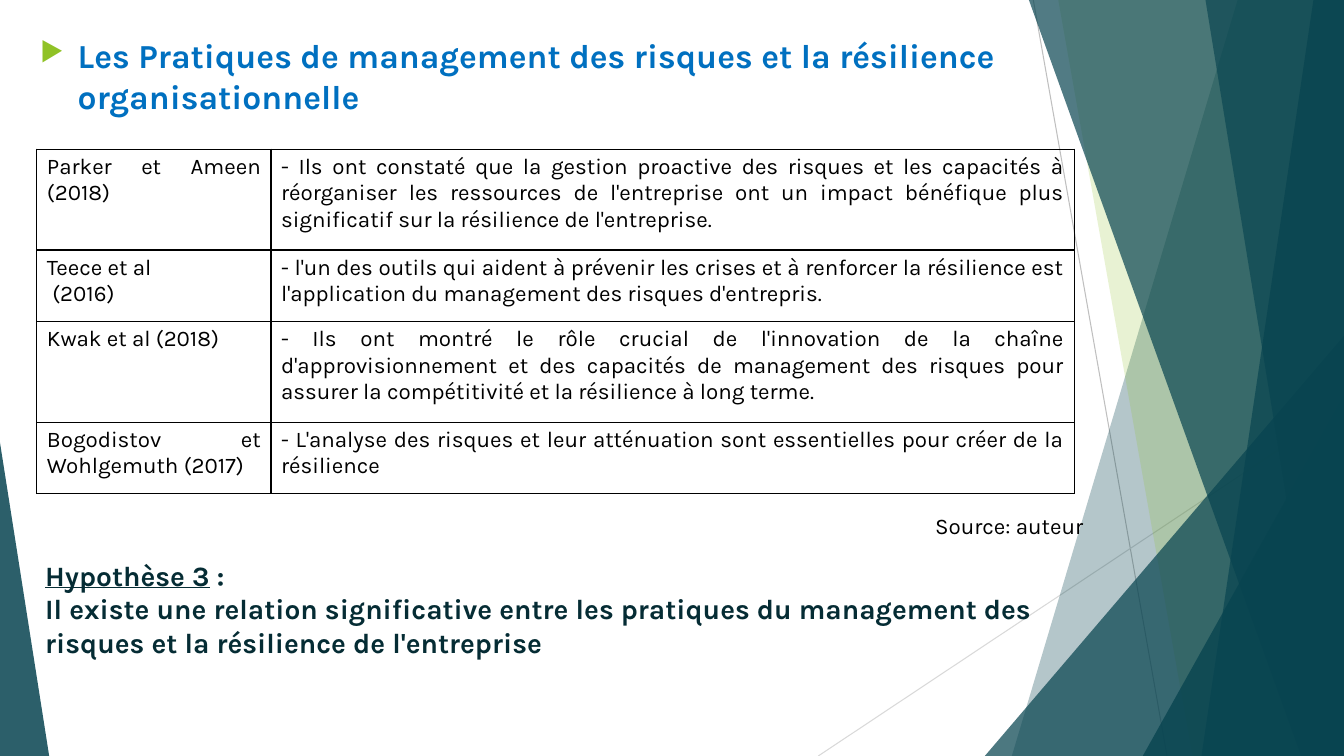
from dataclasses import dataclass

from lxml.etree import SubElement
from pptx import Presentation
from pptx.dml.color import RGBColor as RGB
from pptx.enum.shapes import MSO_CONNECTOR as CONNECTOR, MSO_SHAPE as SHAPE
from pptx.enum.text import PP_ALIGN as ALIGN
from pptx.oxml.ns import qn
from pptx.util import Cm, Pt

WIDTH, HEIGHT = 33.87, 19.05


@dataclass(frozen=True)
class Theme:
    """Colours, font and type sizes of the slide."""
    font: str = "Karla"
    teal: str = "084450"
    green: str = "90C226"
    blue: str = "0070C0"
    dark: str = "052C34"
    black: str = "000000"
    grey: str = "BFBFBF"
    light_grey: str = "D9D9D9"
    heading: int = 24
    hypothesis: int = 20
    body: int = 16


class Painter:
    """Draws styled elements on the current slide."""

    def __init__(self, slide, theme):
        """Keep the slide and its theme."""
        self.slide, self.theme = slide, theme

    def line(self, x1, y1, x2, y2, color):
        """Draw a thin straight line."""
        s = self.slide.shapes.add_connector(CONNECTOR.STRAIGHT, Cm(x1), Cm(y1), Cm(x2), Cm(y2))
        s.line.color.rgb = RGB.from_string(color)
        s.line.width = Pt(0.75)
        SubElement(s._element.spPr, qn("a:effectLst"))

    def tint(self, s, color, opacity):
        """Fill a shape with a translucent colour and no outline."""
        s.shadow.inherit = False
        s.fill.solid()
        s.fill.fore_color.rgb = RGB.from_string(color)
        s.line.fill.background()
        clr = s._element.spPr.find(qn("a:solidFill"))[0]
        SubElement(clr, qn("a:alpha"), val=str(opacity * 1000))

    def band(self, top, bottom, color, opacity):
        """Draw a full-height band from a slanted left edge to the right edge."""
        fb = self.slide.shapes.build_freeform(Cm(top), 0)
        fb.add_line_segments([(Cm(WIDTH), 0), (Cm(WIDTH), Cm(HEIGHT)), (Cm(bottom), Cm(HEIGHT))])
        self.tint(fb.convert_to_shape(), color, opacity)

    def corner(self, x, y, w, apex, opacity):
        """Draw a triangle standing on the bottom edge."""
        s = self.slide.shapes.add_shape(SHAPE.ISOSCELES_TRIANGLE, Cm(x), Cm(y), Cm(w), Cm(HEIGHT - y))
        s.adjustments[0] = apex
        self.tint(s, self.theme.teal, opacity)

    def style(self, tf, size, color, bold=False, align=None):
        """Format every paragraph and run of a text frame."""
        for p in tf.paragraphs:
            p.alignment = align
            for r in p.runs:
                r.font.name, r.font.size, r.font.bold = self.theme.font, Pt(size), bold
                r.font.color.rgb = RGB.from_string(color)

    def text(self, x, y, w, h, text, size, color, bold=False, align=None):
        """Add a wrapped text box and return its text frame."""
        tf = self.slide.shapes.add_textbox(Cm(x), Cm(y), Cm(w), Cm(h)).text_frame
        tf.word_wrap = True
        tf.text = text
        self.style(tf, size, color, bold, align)
        return tf

    def bullet(self, p, char, color, indent):
        """Give a paragraph a coloured bullet with a hanging indent."""
        pPr = p._p.get_or_add_pPr()
        pPr.set("marL", str(Cm(indent)))
        pPr.set("indent", str(-Cm(indent)))
        SubElement(SubElement(pPr, qn("a:buClr")), qn("a:srgbClr"), val=color)
        SubElement(pPr, qn("a:buSzPct"), val="80000")
        SubElement(pPr, qn("a:buChar"), char=char)

    def borders(self, cell):
        """Put a thin black border on all sides of a cell."""
        tcPr = cell._tc.get_or_add_tcPr()
        for side in "LRTB":
            ln = SubElement(tcPr, qn(f"a:ln{side}"), w=str(Pt(1)))
            SubElement(SubElement(ln, qn("a:solidFill")), qn("a:srgbClr"), val=self.theme.black)

    def table(self, x, y, widths, heights, rows):
        """Add a plain bordered table of justified text."""
        frame = self.slide.shapes.add_table(
            len(rows), len(widths), Cm(x), Cm(y), Cm(sum(widths)), Cm(sum(heights)))
        tbl = frame.table
        tbl.first_row = tbl.horz_banding = False
        for col, w in zip(tbl.columns, widths):
            col.width = Cm(w)
        for row, h, texts in zip(tbl.rows, heights, rows):
            row.height = Cm(h)
            for cell, text in zip(row.cells, texts):
                cell.text = text
                self.style(cell.text_frame, self.theme.body, self.theme.black, align=ALIGN.JUSTIFY)
                self.borders(cell)
                cell.fill.background()


STUDIES = [
    ("Parker et Ameen (2018)",
     "- Ils ont constaté que la gestion proactive des risques et les capacités à réorganiser les "
     "ressources de l'entreprise ont un impact bénéfique plus significatif sur la résilience de "
     "l'entreprise."),
    ("Teece et al\n (2016)",
     "- l'un des outils qui aident à prévenir les crises et à renforcer la résilience est "
     "l'application du management des risques d'entrepris."),
    ("Kwak et al (2018)",
     "- Ils ont montré le rôle crucial de l'innovation de la chaîne d'approvisionnement et des "
     "capacités de management des risques pour assurer la compétitivité et la résilience à long "
     "terme."),
    ("Bogodistov et Wohlgemuth (2017)",
     "- L'analyse des risques et leur atténuation sont essentielles pour créer de la résilience"),
]


def draw_backdrop(painter, theme):
    """Draw the facets along the slide edges."""
    painter.line(26.04, 0, 29.41, HEIGHT, theme.grey)
    painter.line(WIDTH, 10.24, 20.62, HEIGHT, theme.light_grey)
    painter.band(31.19, 25.5, theme.teal, 30)
    painter.band(26.67, 30.05, theme.green, 20)
    painter.corner(24.82, 8.46, 9.05, 1, 72)
    painter.band(25.93, 32.79, theme.teal, 70)
    painter.band(33.1, 30.28, theme.teal, 70)
    painter.band(30.38, 33.48, theme.teal, 65)
    painter.corner(28.8, 9.98, 5.07, 1, 80)
    painter.corner(0, 11.15, 1.24, 0, 85)


def draw_content(painter, theme):
    """Add the heading, the table of studies and the hypothesis."""
    tf = painter.text(0.76, 0.76, 28.32, 2.4,
                      "Les Pratiques de management des risques et la résilience organisationnelle",
                      theme.heading, theme.blue, bold=True)
    painter.bullet(tf.paragraphs[0], "▶", theme.green, 0.95)
    painter.text(23.1, 12.78, 4.45, 0.95, "Source: auteur", theme.body, theme.black,
                 align=ALIGN.RIGHT)
    painter.table(0.93, 3.76, (5.9, 20.24), (2.54, 1.8, 2.54, 1.8), STUDIES)
    tf = painter.text(0.89, 13.94, 27.05, 2.8, "Hypothèse 3", theme.hypothesis, theme.dark)
    p = tf.paragraphs[0]
    p.add_run().text = " :"
    tf.add_paragraph().text = ("Il existe une relation significative entre les pratiques du "
                               "management des risques et la résilience de l'entreprise")
    painter.style(tf, theme.hypothesis, theme.dark, bold=True)
    p.runs[0].font.underline = True


def main():
    """Build and save the slide."""
    prs = Presentation()
    prs.slide_width, prs.slide_height = Cm(WIDTH), Cm(HEIGHT)
    theme = Theme()
    painter = Painter(prs.slides.add_slide(prs.slide_layouts[6]), theme)
    draw_backdrop(painter, theme)
    draw_content(painter, theme)
    prs.save("out.pptx")


if __name__ == "__main__":
    main()
